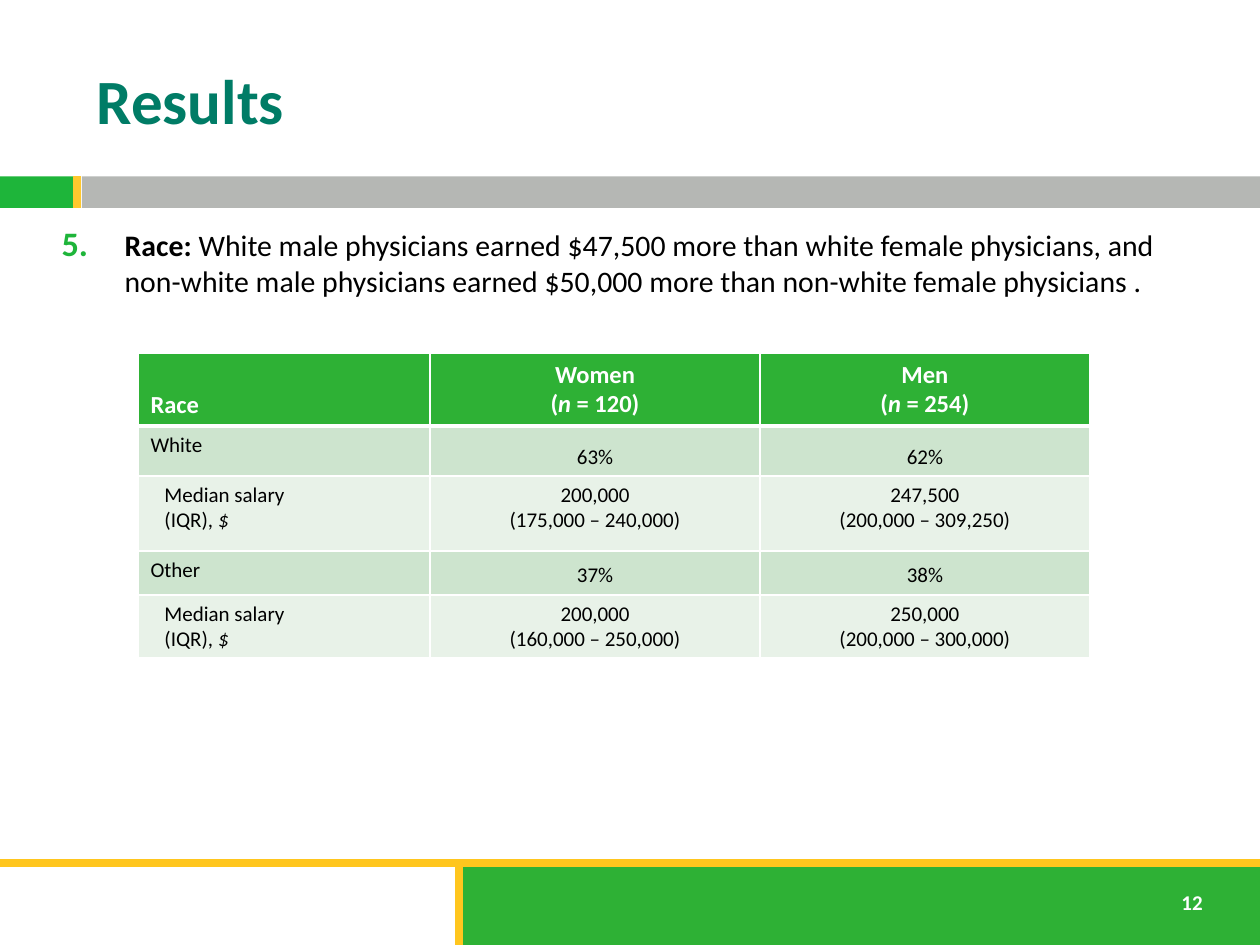
from lxml.etree import SubElement
from pptx import Presentation
from pptx.dml.color import RGBColor
from pptx.enum.shapes import MSO_CONNECTOR, MSO_SHAPE
from pptx.enum.text import MSO_ANCHOR, MSO_AUTO_SIZE, PP_ALIGN
from pptx.oxml.ns import qn
from pptx.util import Pt

GREEN, BRIGHT_GREEN, GOLD, TEAL = "2EB135", "1EB53A", "FFC61E", "007C66"
GRAY, WHITE, BLACK = "B5B7B4", "FFFFFF", "000000"
GROUP_FILL, DETAIL_FILL = "CDE4CE", "E8F2E8"
COLUMN_WIDTHS = [167, 188.5, 188.5]
ROW_HEIGHTS = [41.5, 28.5, 43, 25, 36]
SALARY_LABEL = "Median salary\n(IQR), *$*"
SALARY_ROWS = [
    ["Race", "Women\n(*n* = 120)", "Men\n(*n* = 254)"],
    ["White", "63%", "62%"],
    [SALARY_LABEL, "200,000\n(175,000 – 240,000)", "247,500\n(200,000 – 309,250)"],
    ["Other", "37%", "38%"],
    [SALARY_LABEL, "200,000\n(160,000 – 250,000)", "250,000\n(200,000 – 300,000)"],
]


def color(hex_code):
    """Turn a hex string into a colour."""
    return RGBColor.from_string(hex_code)


def style(font, size, hex_code, bold=False):
    """Apply the deck's typeface with a size, colour and weight."""
    font.name, font.size, font.bold = "Calibri", Pt(size), bold
    font.color.rgb = color(hex_code)


def place(element, left, top, width, height):
    """Move and size an element, in points."""
    element.left, element.top = Pt(left), Pt(top)
    element.width, element.height = Pt(width), Pt(height)


def add_band(slide, left, top, width, height, fill):
    """Draw a plain filled rectangle."""
    band = slide.shapes.add_shape(
        MSO_SHAPE.RECTANGLE, Pt(left), Pt(top), Pt(width), Pt(height))
    band.shadow.inherit = False
    band.fill.solid()
    band.fill.fore_color.rgb = color(fill)
    band.line.fill.background()


def add_rule(slide, x1, y1, x2, y2, hex_code=GOLD):
    """Draw a thick straight accent line."""
    rule = slide.shapes.add_connector(
        MSO_CONNECTOR.STRAIGHT, Pt(x1), Pt(y1), Pt(x2), Pt(y2))
    rule.line.color.rgb = color(hex_code)
    rule.line.width = Pt(4.5)
    SubElement(rule._element.spPr, qn("a:effectLst"))


def add_decoration(slide):
    """Draw the header strip and the footer."""
    add_band(slide, 0, 100.8, 42, 18, BRIGHT_GREEN)
    add_band(slide, 46.8, 100.8, 673.2, 18, GRAY)
    add_band(slide, 260.6, 493, 459.4, 47, GREEN)
    add_rule(slide, 0, 493, 720, 493)
    add_rule(slide, 262.2, 494, 262.2, 540)
    add_rule(slide, 44.2, 100.8, 44.2, 118.8, "FFC82E")


def add_page_number(slide, number):
    """Write the page number in the footer."""
    page = slide.shapes.add_textbox(Pt(668), Pt(504.7), Pt(29), Pt(21.6))
    page.text_frame.text = number
    page.text_frame.word_wrap = False
    style(page.text_frame.paragraphs[0].runs[0].font, 12, WHITE, True)


def fill_title(title, wording):
    """Write the slide heading."""
    place(title, 48, 18, 642, 78)
    title.text_frame.text = wording
    title.text_frame.auto_size = MSO_AUTO_SIZE.NONE
    title.text_frame.vertical_anchor = MSO_ANCHOR.MIDDLE
    heading = title.text_frame.paragraphs[0]
    heading.alignment = PP_ALIGN.LEFT
    style(heading.runs[0].font, 36, TEAL, True)


def fill_finding(body, number, lead, statement):
    """Write one numbered finding with a bold lead-in."""
    place(body, 28, 126, 644.5, 99.5)
    body.text_frame.auto_size = MSO_AUTO_SIZE.NONE
    finding = body.text_frame.paragraphs[0]
    properties = finding._p.get_or_add_pPr()
    properties.set("marL", str(Pt(36)))
    properties.set("indent", str(-Pt(36)))
    finding.space_before = Pt(0)
    bullet_color = SubElement(properties, qn("a:buClr"))
    SubElement(bullet_color, qn("a:srgbClr"), val=BRIGHT_GREEN)
    SubElement(properties, qn("a:buSzPct"), val="115000")
    SubElement(properties, qn("a:buFont"), typeface="+mj-lt")
    SubElement(properties, qn("a:buAutoNum"), type="arabicPeriod", startAt=str(number))
    for wording, bold in ((lead, True), (statement, False)):
        part = finding.add_run()
        part.text = wording
        style(part.font, 17, BLACK, bold)


def set_borders(cell, top, bottom):
    """Give a cell white borders."""
    properties = cell._tc.get_or_add_tcPr()
    for side, width in (("L", 1), ("R", 1), ("T", top), ("B", bottom)):
        border = SubElement(properties, qn(f"a:ln{side}"), w=str(Pt(width)))
        SubElement(SubElement(border, qn("a:solidFill")), qn("a:srgbClr"), val=WHITE)


def write_cell(cell, wording, size, hex_code, bold, alignment):
    """Write cell lines, with starred parts in italics."""
    cell.text_frame.text = wording.replace("*", "")
    for line, marked in zip(cell.text_frame.paragraphs, wording.split("\n")):
        line.alignment = alignment
        line.text = ""
        for index, piece in enumerate(marked.split("*")):
            if piece:
                part = line.add_run()
                part.text = piece
                style(part.font, size, hex_code, bold)
                part.font.italic = index % 2 == 1


def add_salary_table(slide):
    """Build the table of salaries by race and gender."""
    table = slide.shapes.add_table(
        len(ROW_HEIGHTS), len(COLUMN_WIDTHS), Pt(78.8), Pt(202),
        Pt(sum(COLUMN_WIDTHS)), Pt(sum(ROW_HEIGHTS))).table
    for column, width in zip(table.columns, COLUMN_WIDTHS):
        column.width = Pt(width)
    for r, (row, height) in enumerate(zip(table.rows, ROW_HEIGHTS)):
        row.height = Pt(height)
        header, group = r == 0, r % 2 == 1
        fill = GREEN if header else GROUP_FILL if group else DETAIL_FILL
        for c, cell in enumerate(row.cells):
            set_borders(cell, 3 if r == 1 else 1, 3 if header else 1)
            cell.fill.solid()
            cell.fill.fore_color.rgb = color(fill)
            at_bottom = (header and c == 0) or (group and c > 0)
            cell.vertical_anchor = MSO_ANCHOR.BOTTOM if at_bottom else MSO_ANCHOR.TOP
            if c == 0 and not header and not group:
                cell.margin_left = Pt(15.2)
            write_cell(cell, SALARY_ROWS[r][c], 14 if header else 12,
                       WHITE if header else BLACK, header,
                       PP_ALIGN.CENTER if c else PP_ALIGN.LEFT)


def main():
    """Build and save the results slide."""
    deck = Presentation()
    deck.slide_width, deck.slide_height = Pt(720), Pt(540)
    slide = deck.slides.add_slide(deck.slide_layouts[1])
    add_decoration(slide)
    add_page_number(slide, "12")
    fill_title(slide.shapes.title, "Results")
    add_salary_table(slide)
    fill_finding(
        slide.placeholders[1], 5, "Race:",
        " White male physicians earned $47,500 more than white female physicians, "
        "and non-white male physicians earned $50,000 more than non-white female "
        "physicians .")
    deck.save("out.pptx")


if __name__ == "__main__":
    main()
